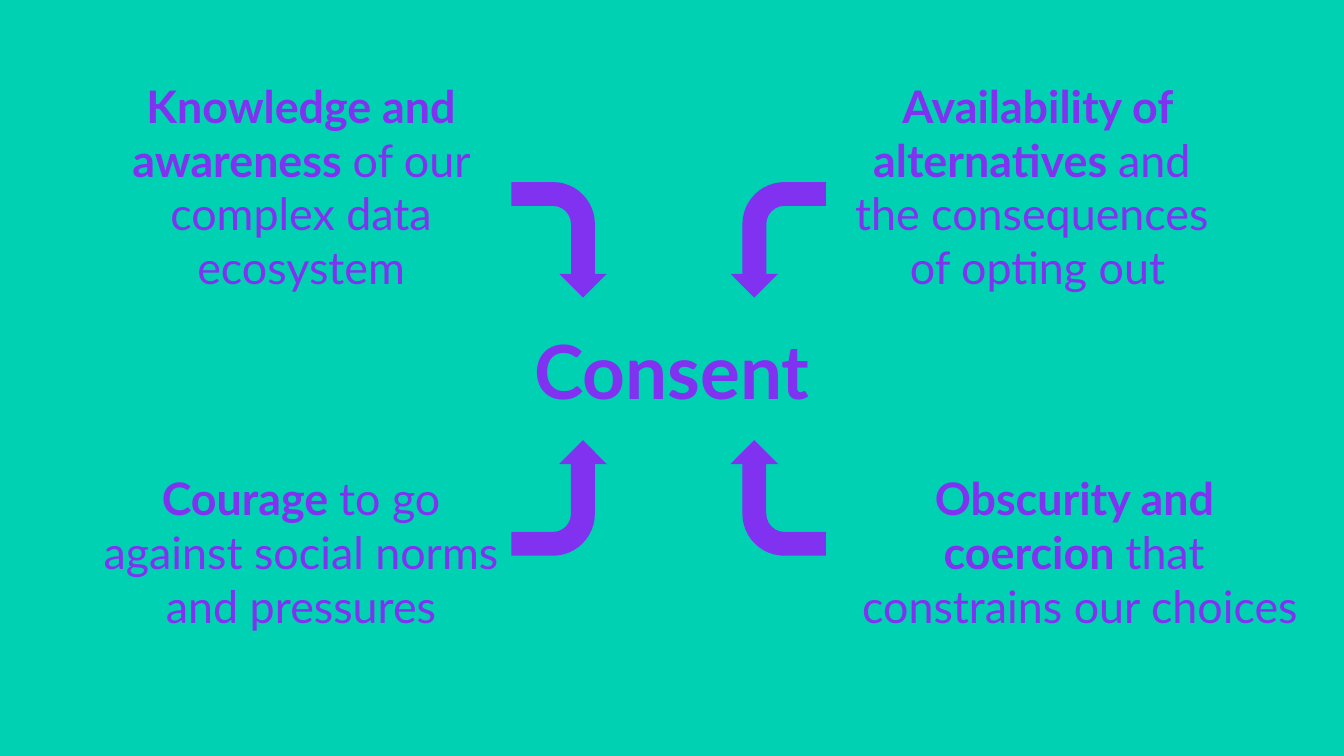
from pptx import Presentation
from pptx.dml.color import RGBColor
from pptx.enum.shapes import MSO_SHAPE
from pptx.enum.text import MSO_ANCHOR, MSO_AUTO_SIZE, PP_ALIGN
from pptx.util import Inches, Pt

COLORS = {"background": "00D1B2", "accent": "8132F1"}
FONT = "Lato"
TITLE = [("Consent", True)]
FACTORS = [
    (0.67, 0.55, 3.14, [("Knowledge and awareness ", True),
                        ("of our complex data ecosystem", False)]),
    (6.15, 0.55, 3.14, [("Availability of alternatives ", True),
                        ("and \nthe consequences \nof opting out", False)]),
    (0.67, 3.27, 3.14, [("Courage ", True),
                        ("to go against social norms and pressures", False)]),
    (6.28, 3.27, 3.51, [("Obscurity and \ncoercion ", True),
                        ("that \nconstrains our choices", False)]),
]
FACTOR_HEIGHT = 1.67
ARROW_COLUMNS = [(3.73, 90), (5.36, 270)]
ARROW_ROWS = [1.43, 3.35]
ARROW_SIZE = (0.86, 0.71)
ARROW_ADJUSTMENTS = [0.25, 0.25, 0.25, 0.44]


def write_text(box, parts, size, color, font):
    frame = box.text_frame
    frame.auto_size = MSO_AUTO_SIZE.NONE
    frame.word_wrap = True
    frame.vertical_anchor = MSO_ANCHOR.MIDDLE
    frame.margin_left = frame.margin_right = Inches(0.1)
    frame.margin_top = frame.margin_bottom = Inches(0.1)
    para = frame.paragraphs[0]
    para.alignment = PP_ALIGN.CENTER
    for text, bold in parts:
        for index, line in enumerate(text.split("\n")):
            if index:
                para.add_line_break()
            span = para.add_run()
            span.text = line
            span.font.name = font
            span.font.size = Pt(size)
            span.font.bold = bold
            span.font.color.rgb = RGBColor.from_string(color)


def add_arrow(page, left, top, rotation, flipped):
    arrow = page.shapes.add_shape(
        MSO_SHAPE.BENT_ARROW, Inches(left), Inches(top), *map(Inches, ARROW_SIZE))
    for index, value in enumerate(ARROW_ADJUSTMENTS):
        arrow.adjustments[index] = value
    arrow.rotation = rotation
    if flipped:
        arrow._element.spPr.xfrm.set("flipH", "1")
    arrow.shadow.inherit = False
    arrow.fill.solid()
    arrow.fill.fore_color.rgb = RGBColor.from_string(COLORS["accent"])
    arrow.line.fill.background()


def main():
    deck = Presentation()
    deck.slide_width = Inches(10)
    deck.slide_height = deck.slide_width * 9 // 16
    page = deck.slides.add_slide(deck.slide_layouts[5])
    page.background.fill.solid()
    page.background.fill.fore_color.rgb = RGBColor.from_string(COLORS["background"])

    title = page.shapes.title
    title.left, title.top = Inches(0.34), Inches(2.29)
    title.width, title.height = Inches(9.32), Inches(0.92)
    write_text(title, TITLE, size=40, color=COLORS["accent"], font=FONT)

    for left, top, width, parts in FACTORS:
        box = page.shapes.add_textbox(
            Inches(left), Inches(top), Inches(width), Inches(FACTOR_HEIGHT))
        write_text(box, parts, size=24, color=COLORS["accent"], font=FONT)

    for row, top in enumerate(ARROW_ROWS):
        for column, (left, rotation) in enumerate(ARROW_COLUMNS):
            add_arrow(page, left, top, rotation, flipped=row != column)

    deck.save("out.pptx")


if __name__ == "__main__":
    main()
